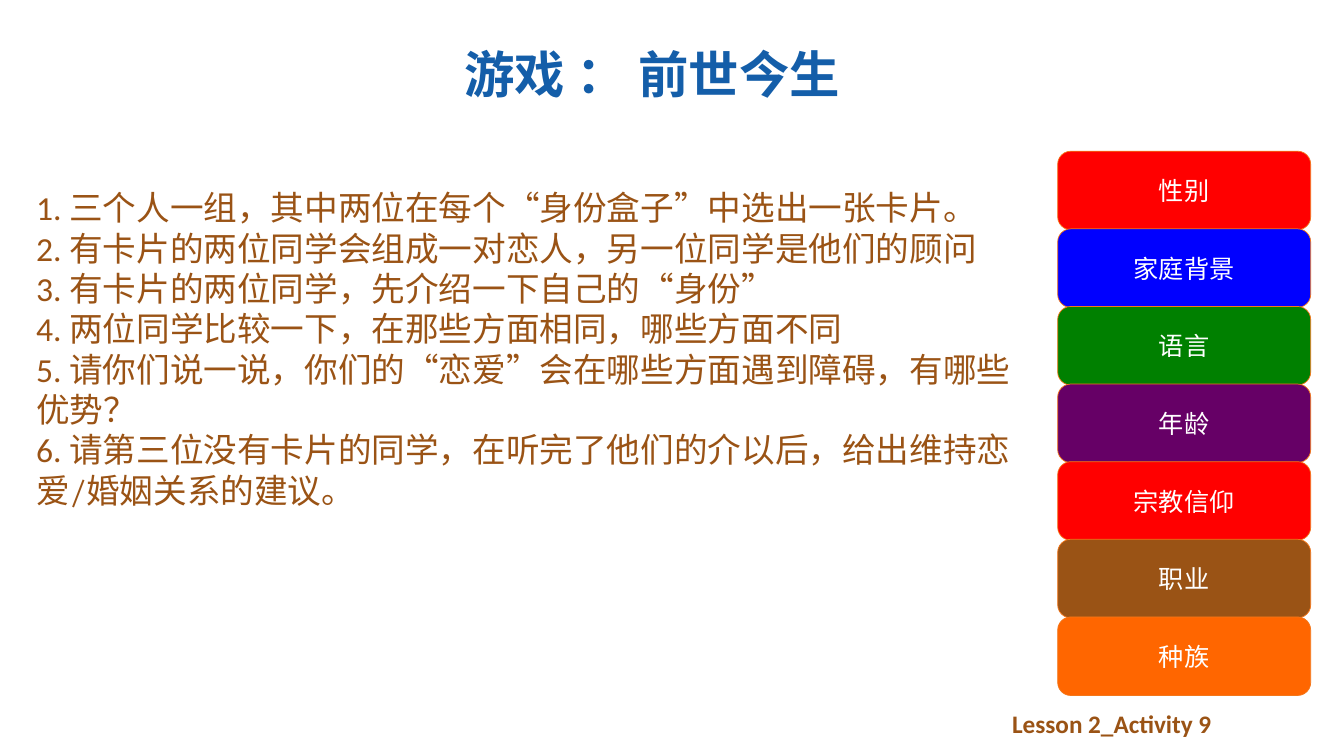
from pptx import Presentation
from pptx.dml.color import RGBColor
from pptx.enum.shapes import MSO_SHAPE
from pptx.enum.text import MSO_ANCHOR, PP_ALIGN
from pptx.util import Inches, Pt

ROUNDED = MSO_SHAPE.ROUNDED_RECTANGLE
MIDDLE = MSO_ANCHOR.MIDDLE
CENTER = PP_ALIGN.CENTER

BLUE = RGBColor(0x14, 0x5E, 0xA9)
BROWN = RGBColor(0x9A, 0x53, 0x15)
ORANGE_LINE = RGBColor(0xF3, 0x77, 0x1A)
WHITE = RGBColor(0xFF, 0xFF, 0xFF)
RED = RGBColor(0xFF, 0x00, 0x00)
PURE_BLUE = RGBColor(0x00, 0x00, 0xFF)
GREEN = RGBColor(0x00, 0x80, 0x00)
PURPLE = RGBColor(0x66, 0x00, 0x66)
ORANGE = RGBColor(0xFF, 0x66, 0x00)

TITLE = "游戏 ： 前世今生"
FOOTER = "Lesson 2_Activity 9"
STEPS = [
    "三个人一组，其中两位在每个“身份盒子”中选出一张卡片。",
    "有卡片的两位同学会组成一对恋人，另一位同学是他们的顾问",
    "有卡片的两位同学，先介绍一下自己的“身份”",
    "两位同学比较一下，在那些方面相同，哪些方面不同",
    "请你们说一说，你们的“恋爱”会在哪些方面遇到障碍，有哪些优势？",
    "请第三位没有卡片的同学，在听完了他们的介以后，给出维持恋爱/婚姻关系的建议。",
]
IDENTITIES = [
    ("性别", RED),
    ("家庭背景", PURE_BLUE),
    ("语言", GREEN),
    ("年龄", PURPLE),
    ("宗教信仰", RED),
    ("职业", BROWN),
    ("种族", ORANGE),
]
CARD_LEFT, CARD_TOP, CARD_WIDTH, CARD_HEIGHT = 10.49, 1.5, 2.51, 0.78
CARD_PITCH = 0.77


def style(span, size, color, bold=False, name="Calibri"):
    span.font.name = name
    span.font.size = Pt(size)
    span.font.bold = bold
    span.font.color.rgb = color


def add_text_box(page, left, top, width, height, wrap=True):
    box = page.shapes.add_textbox(
        Inches(left), Inches(top), Inches(width), Inches(height))
    box.text_frame.word_wrap = wrap
    return box.text_frame


def add_title(page):
    frame = add_text_box(page, 0.47, 0.23, 12, 1.07)
    frame.vertical_anchor = MIDDLE
    frame.text = TITLE
    para = frame.paragraphs[0]
    para.alignment = CENTER
    para.line_spacing = 0.9
    style(para.runs[0], 36, BLUE, bold=True)


def add_steps(page):
    frame = add_text_box(page, 0.26, 1.81, 10.02, 3.64)
    for number, step in enumerate(STEPS, 1):
        para = frame.paragraphs[0] if number == 1 else frame.add_paragraph()
        for text, name in ((f"{number}. ", "Calibri"), (step, "Cambria")):
            span = para.add_run()
            span.text = text
            style(span, 24, BROWN, name=name)


def add_cards(page):
    for index, (label, color) in enumerate(IDENTITIES):
        card = page.shapes.add_shape(
            ROUNDED, Inches(CARD_LEFT), Inches(CARD_TOP + index * CARD_PITCH),
            Inches(CARD_WIDTH), Inches(CARD_HEIGHT))
        card.shadow.inherit = False
        card.fill.solid()
        card.fill.fore_color.rgb = color
        card.line.color.rgb = ORANGE_LINE
        card.line.width = Pt(0.5)
        card.text_frame.text = label
        card.text_frame.vertical_anchor = MIDDLE
        para = card.text_frame.paragraphs[0]
        para.alignment = CENTER
        style(para.runs[0], 18, WHITE)


def add_footer(page):
    frame = add_text_box(page, 9.94, 6.98, 2.2, 0.4, wrap=False)
    frame.text = FOOTER
    style(frame.paragraphs[0].runs[0], 18, BROWN, bold=True)


def main():
    deck = Presentation()
    deck.slide_width = Inches(13.33)
    deck.slide_height = Inches(7.5)
    page = deck.slides.add_slide(deck.slide_layouts[6])
    add_title(page)
    add_cards(page)
    add_steps(page)
    add_footer(page)
    deck.save("out.pptx")


if __name__ == "__main__":
    main()
